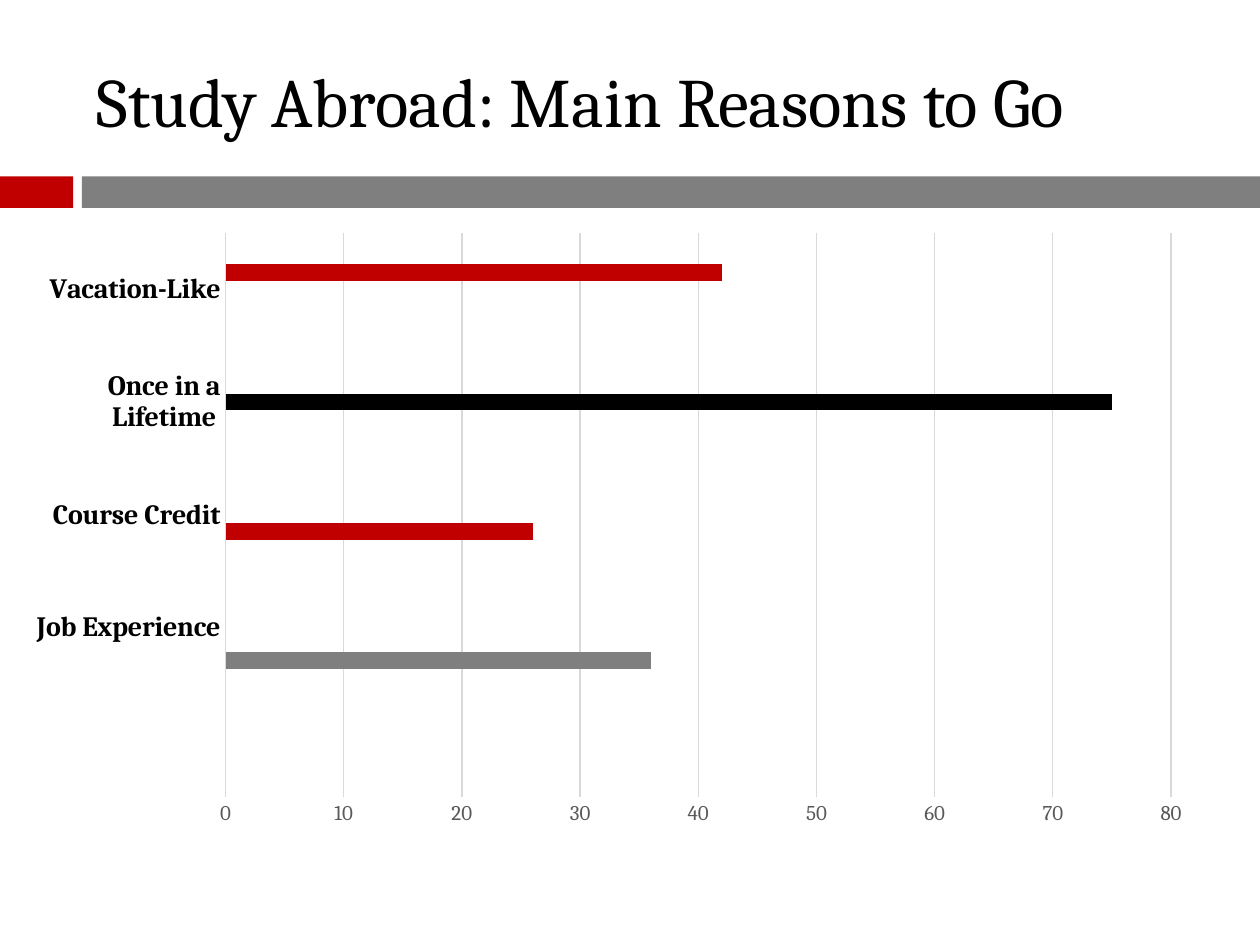
from lxml import etree
from pptx import Presentation
from pptx.chart.data import CategoryChartData
from pptx.dml.color import RGBColor
from pptx.enum.chart import XL_CHART_TYPE as ChartType, XL_TICK_MARK as TickMark
from pptx.enum.shapes import MSO_SHAPE as Shape
from pptx.enum.text import MSO_ANCHOR as Anchor
from pptx.oxml.ns import qn
from pptx.util import Inches, Pt

RED, GREY, BLACK = "C00000", "7F7F7F", "000000"
PALE, RULE, LABEL = "D8D8D8", "D9D9D9", "595959"


def color(value):
    return RGBColor.from_string(value)


class SlideBuilder:
    """Holds the style and the current slide."""

    font_name = "Cambria"

    def __init__(self, slide):
        self.slide = slide

    def style_font(self, font, size, hex_color, bold=False):
        font.name = self.font_name
        font.size = Pt(size)
        font.bold = bold
        font.color.rgb = color(hex_color)

    def style_line(self, line, hex_color):
        line.color.rgb = color(hex_color)
        line.width = Pt(0.75)

    def band(self, left, width, fill):
        shape = self.slide.shapes.add_shape(
            Shape.RECTANGLE, Inches(left), Inches(1.4), Inches(width), Inches(0.25))
        shape.shadow.inherit = False
        shape.fill.solid()
        shape.fill.fore_color.rgb = color(fill)
        shape.line.fill.background()

    def title(self, text, left, top, width, height):
        box = self.slide.shapes.add_textbox(
            Inches(left), Inches(top), Inches(width), Inches(height))
        frame = box.text_frame
        frame.word_wrap = True
        frame.vertical_anchor = Anchor.MIDDLE
        run = frame.paragraphs[0].add_run()
        run.text = text
        self.style_font(run.font, 39.6, BLACK)

    def bar_chart(self, categories, series_values, colors, left, top, width, height):
        data = CategoryChartData()
        data.categories = categories
        for number, values in enumerate(series_values, 1):
            data.add_series(f"Series {number}", values)
        chart = self.slide.shapes.add_chart(
            ChartType.BAR_CLUSTERED, Inches(left), Inches(top),
            Inches(width), Inches(height), data).chart
        chart.has_legend = False
        chart.has_title = False
        self.style_font(chart.font, 10, BLACK)

        # Bars
        plot = chart.plots[0]
        plot.gap_width = 182
        plot.overlap = 0
        plot.vary_by_categories = False
        for series, fill in zip(plot.series, colors):
            series.invert_if_negative = False
            series.format.fill.solid()
            series.format.fill.fore_color.rgb = color(fill)

        # Axes
        category_axis, value_axis = chart.category_axis, chart.value_axis
        for axis in (category_axis, value_axis):
            axis.major_tick_mark = axis.minor_tick_mark = TickMark.NONE
        self.style_font(category_axis.tick_labels.font, 16, BLACK, bold=True)
        self.style_line(category_axis.format.line, RULE)
        self.style_font(value_axis.tick_labels.font, 12, LABEL)
        value_axis.format.line.fill.background()
        value_axis.minimum_scale, value_axis.maximum_scale = 0, 80
        value_axis.major_unit = 10
        value_axis.has_major_gridlines = True
        self.style_line(value_axis.major_gridlines.format.line, RULE)
        return chart

    def place_plot(self, chart, x, y, w, h):
        """Fix the inner plot area, in fractions of the chart."""
        plot_area = chart.plots[0]._element.getparent()
        for old in plot_area.findall(qn("c:layout")):
            plot_area.remove(old)
        layout = etree.Element(qn("c:layout"))
        manual = etree.SubElement(layout, qn("c:manualLayout"))
        settings = {"layoutTarget": "inner", "xMode": "edge", "yMode": "edge",
                    "x": x, "y": y, "w": w, "h": h}
        for name, value in settings.items():
            etree.SubElement(manual, qn(f"c:{name}")).set("val", str(value))
        plot_area.insert(0, layout)


def main():
    presentation = Presentation()
    presentation.slide_width, presentation.slide_height = Inches(10), Inches(7.5)
    builder = SlideBuilder(presentation.slides.add_slide(presentation.slide_layouts[6]))

    # Heading and bands
    builder.band(0, 0.58, RED)
    builder.band(0.65, 9.35, GREY)
    builder.title("Study Abroad: Main Reasons to Go", 0.67, 0.25, 8.92, 1.08)

    # Chart: each series fills one category, the first category stays empty
    categories = ["", "Job Experience", "Course Credit", "Once in a Lifetime", "Vacation-Like"]
    reasons = [36, 26, 75, 42]
    series_values = [[value if column == row else None for column in range(len(categories))]
                     for row, value in enumerate(reasons, 1)]
    series_values.append([None] * len(categories))
    chart = builder.bar_chart(categories, series_values, [RED if i in (1, 3) else c for i, c in
                              enumerate([GREY, RED, BLACK, RED, PALE])], 0.08, 1.75, 9.5, 4.92)
    builder.place_plot(chart, 0.18, 0.02, 0.79, 0.91)

    presentation.save("out.pptx")


if __name__ == "__main__":
    main()
